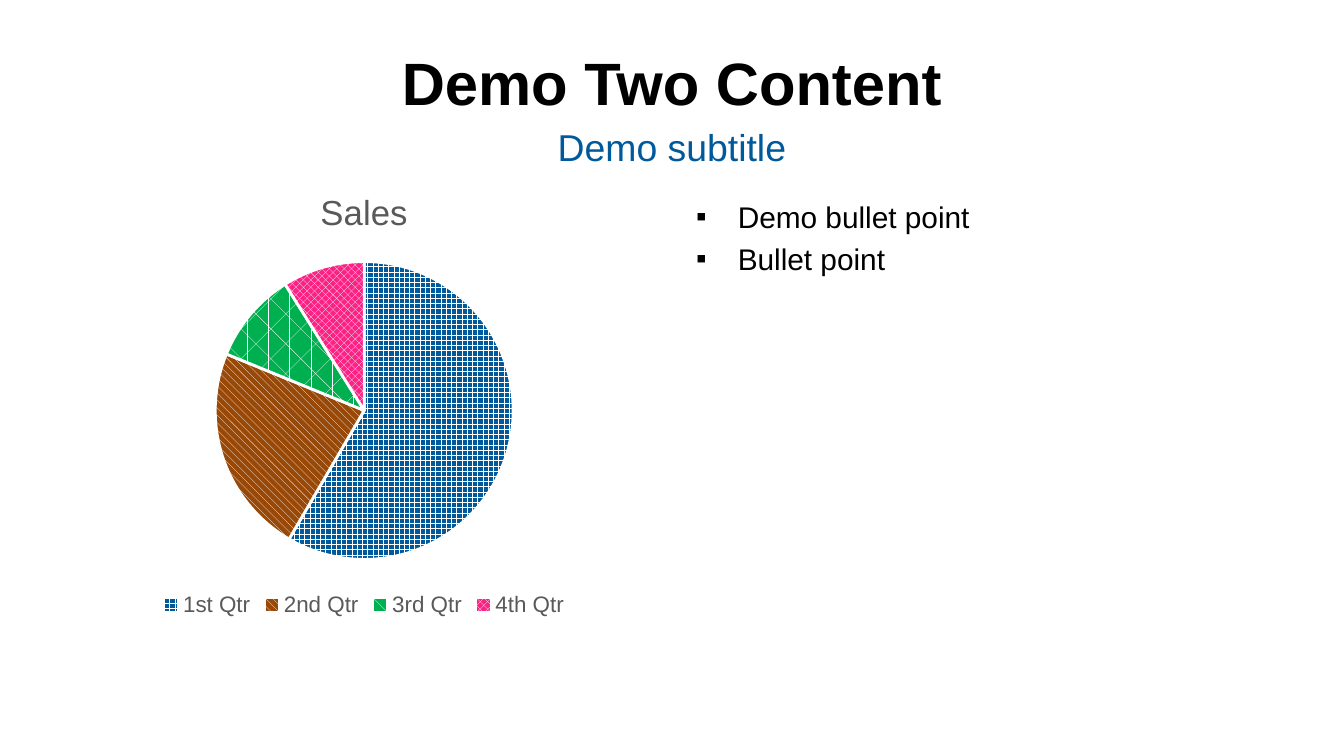
from typing import NamedTuple

from lxml.etree import SubElement
from pptx import Presentation
from pptx.chart.data import CategoryChartData
from pptx.dml.color import RGBColor
from pptx.enum.chart import XL_CHART_TYPE as ChartType, XL_LEGEND_POSITION as LegendPosition
from pptx.enum.dml import MSO_PATTERN as Pattern
from pptx.enum.text import MSO_ANCHOR as Anchor, MSO_AUTO_SIZE as AutoSize, PP_ALIGN as Align
from pptx.oxml.ns import qn
from pptx.util import Inches, Pt

FONT = "Arial"
COLORS = {
    "white": "FFFFFF",
    "black": "000000",
    "gray": "595959",
    "blue": "00599B",
    "brown": "984807",
    "green": "00B050",
    "pink": "FC2184",
}


class Area(NamedTuple):
    left: float
    top: float
    width: float
    height: float


class Style(NamedTuple):
    size: float
    color: str
    bold: bool = False
    align: Align = Align.LEFT
    anchor: Anchor = Anchor.TOP
    bullet: str = ""
    indent: float = 0


class Quarter(NamedTuple):
    name: str
    sales: int
    pattern: Pattern
    color: str


QUARTERS = [
    Quarter("1st Qtr", 59, Pattern.LARGE_GRID, "blue"),
    Quarter("2nd Qtr", 23, Pattern.WIDE_DOWNWARD_DIAGONAL, "brown"),
    Quarter("3rd Qtr", 10, Pattern.DIVOT, "green"),
    Quarter("4th Qtr", 9, Pattern.SOLID_DIAMOND, "pink"),
]


def rgb(name: str) -> RGBColor:
    return RGBColor.from_string(COLORS[name])


def set_font(font, size: float, color: str, bold: bool = False) -> None:
    font.name = FONT
    font.size = Pt(size)
    font.bold = bold
    font.color.rgb = rgb(color)


def set_bullet(para, bullet: str, indent: float) -> None:
    """Give the paragraph a hanging bullet, or none if the bullet is empty."""
    props = para._p.get_or_add_pPr()
    props.set("marL", str(Inches(indent)))
    props.set("indent", str(-Inches(indent)))
    if bullet:
        SubElement(props, qn("a:buFont"), typeface=FONT)
        SubElement(props, qn("a:buChar"), char=bullet)
    else:
        SubElement(props, qn("a:buNone"))


def fill_placeholder(box, area: Area, lines: list[str], style: Style) -> None:
    box.left, box.top, box.width, box.height = map(Inches, area)
    frame = box.text_frame
    frame.text = "\n".join(lines)
    frame.word_wrap = True
    frame.auto_size = AutoSize.NONE
    frame.vertical_anchor = style.anchor
    for index, para in enumerate(frame.paragraphs):
        para.alignment = style.align
        para.space_before = Pt(0.2 * style.size if index else 0)
        set_bullet(para, style.bullet, style.indent)
        set_font(para.font, style.size, style.color, style.bold)


def add_sales_pie(page, area: Area) -> None:
    data = CategoryChartData()
    data.categories = [quarter.name for quarter in QUARTERS]
    data.add_series("Sales", [quarter.sales for quarter in QUARTERS])
    chart = page.shapes.add_chart(ChartType.PIE, *map(Inches, area), data).chart
    set_font(chart.font, 10, "black")

    chart.has_title = True
    title = chart.chart_title.text_frame
    title.text = "Sales"
    set_font(title.paragraphs[0].font, 18.6, "gray")

    chart.has_legend = True
    chart.legend.position = LegendPosition.BOTTOM
    chart.legend.include_in_layout = False
    set_font(chart.legend.font, 12, "gray")

    plot = chart.plots[0]
    plot.vary_by_categories = True
    for index, quarter in enumerate(QUARTERS):
        look = plot.series[0].points[index].format
        look.fill.patterned()
        look.fill.pattern = quarter.pattern
        look.fill.fore_color.rgb = rgb("white")
        look.fill.back_color.rgb = rgb(quarter.color)
        look.line.color.rgb = rgb("white")
        look.line.width = Pt(1.5)


def main() -> None:
    deck = Presentation()
    deck.slide_width = Inches(10)
    deck.slide_height = deck.slide_width * 9 // 16
    page = deck.slides.add_slide(deck.slide_layouts.get_by_name("Two Content"))
    title, subtitle, bullets = page.placeholders

    fill_placeholder(title, Area(0.5, 0.14, 9, 0.94), ["Demo Two Content"],
                     Style(32, "black", bold=True, align=Align.CENTER, anchor=Anchor.MIDDLE))
    fill_placeholder(subtitle, Area(0.5, 0.87, 9, 0.37), ["Demo subtitle"],
                     Style(20, "blue", align=Align.CENTER))
    add_sales_pie(page, Area(0.5, 1.24, 4.42, 3.39))
    fill_placeholder(bullets, Area(5.08, 1.43, 4.42, 3.39),
                     ["Demo bullet point", "Bullet point"],
                     Style(16, "black", bullet="▪", indent=0.31))
    deck.save("out.pptx")


if __name__ == "__main__":
    main()
